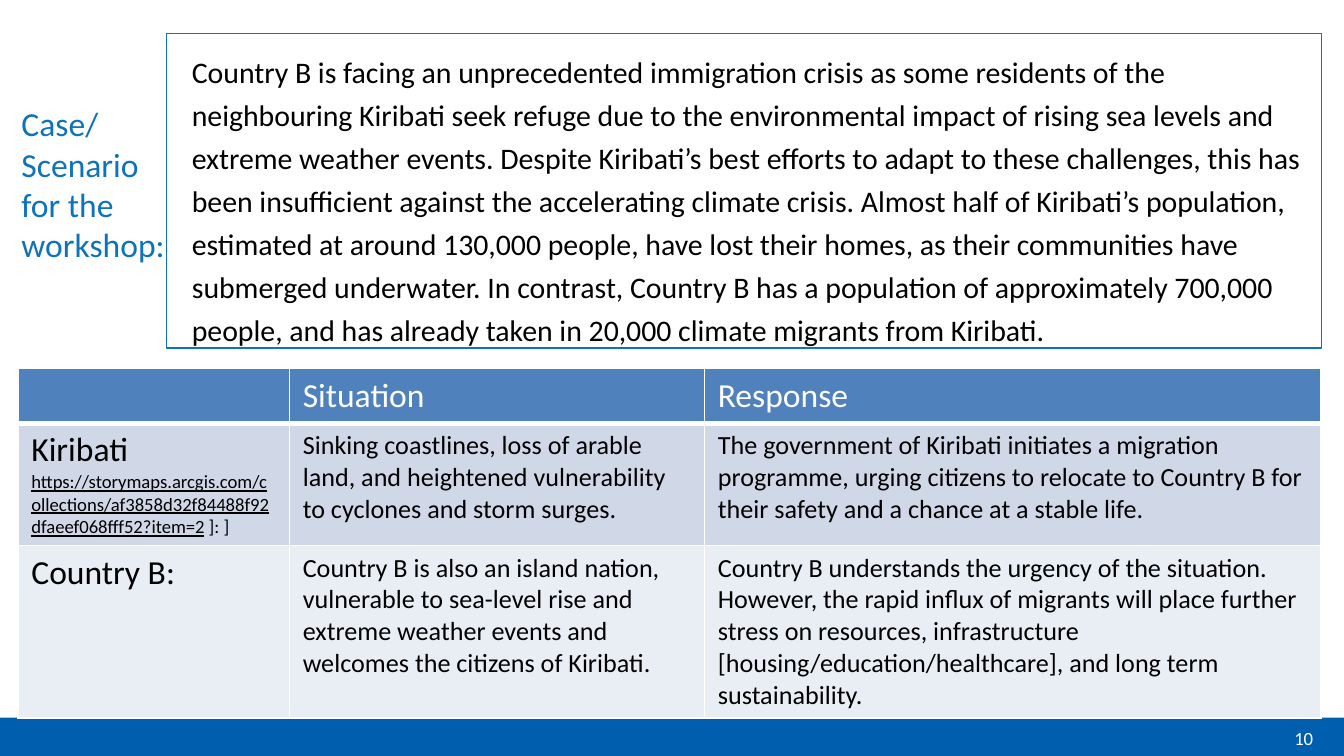
from dataclasses import dataclass

from lxml import etree
from pptx import Presentation
from pptx.dml.color import RGBColor
from pptx.enum import shapes, text
from pptx.oxml import ns
from pptx.util import Pt

FONT = "Calibri"
COLORS = {
    "band": "005EAE",
    "accent": "0E73B9",
    "header": "4F81BD",
    "row_dark": "D0D8E8",
    "row_light": "E9EDF4",
    "white": "FFFFFF",
    "black": "000000",
}


@dataclass
class Run:
    text: str
    size: float
    color: str = "black"
    underline: bool = False


@dataclass
class Row:
    height: float
    fill: str
    cells: list[list[Run]]


def rgb(name: str) -> RGBColor:
    return RGBColor.from_string(COLORS[name])


def add_runs(p, runs: list[Run]) -> None:
    for run in runs:
        r = p.add_run()
        r.text = run.text
        r.font.name = FONT
        r.font.size = Pt(run.size)
        r.font.bold = False
        r.font.underline = run.underline
        r.font.color.rgb = rgb(run.color)


def place(sp, left: float, top: float, width: float, height: float) -> None:
    sp.left, sp.top, sp.width, sp.height = map(Pt, (left, top, width, height))


def set_frame(tf, anchor, runs: list[Run], align=text.PP_ALIGN.LEFT):
    tf.word_wrap = True
    tf.auto_size = text.MSO_AUTO_SIZE.NONE
    tf.vertical_anchor = anchor
    tf.margin_left = tf.margin_right = tf.margin_top = tf.margin_bottom = Pt(7.2)
    p = tf.paragraphs[0]
    p.alignment = align
    add_runs(p, runs)
    return p


def add_rect(slide, left: float, top: float, width: float, height: float):
    sp = slide.shapes.add_shape(
        shapes.MSO_SHAPE.RECTANGLE, Pt(left), Pt(top), Pt(width), Pt(height))
    sp.shadow.inherit = False
    return sp


def set_borders(cell, bottom: float) -> None:
    """Draw white cell borders; they must precede the cell fill in the XML."""
    tc_pr = cell._tc.get_or_add_tcPr()
    for i, (side, width) in enumerate(
            [("lnL", 1), ("lnR", 1), ("lnT", 1), ("lnB", bottom)]):
        ln = etree.Element(ns.qn(f"a:{side}"), w=str(Pt(width)))
        fill = etree.SubElement(ln, ns.qn("a:solidFill"))
        etree.SubElement(fill, ns.qn("a:srgbClr"), val=COLORS["white"])
        tc_pr.insert(i, ln)


def add_grid(slide, left: float, top: float, widths: list[float], rows: list[Row]) -> None:
    table = slide.shapes.add_table(
        len(rows), len(widths), Pt(left), Pt(top),
        Pt(sum(widths)), Pt(sum(row.height for row in rows))).table
    for column, width in zip(table.columns, widths):
        column.width = Pt(width)
    for i, row in enumerate(rows):
        table.rows[i].height = Pt(row.height)
        for j, runs in enumerate(row.cells):
            cell = table.cell(i, j)
            cell.fill.solid()
            cell.fill.fore_color.rgb = rgb(row.fill)
            set_borders(cell, bottom=3 if i == 0 else 1)
            add_runs(cell.text_frame.paragraphs[0], runs)


SCENARIO = (
    "Country B is facing an unprecedented immigration crisis as some residents of the "
    "neighbouring Kiribati seek refuge due to the environmental impact of rising sea levels "
    "and extreme weather events. Despite Kiribati’s best efforts to adapt to these "
    "challenges, this has been insufficient against the accelerating climate crisis. Almost "
    "half of Kiribati’s population, estimated at around 130,000 people, have lost their "
    "homes, as their communities have submerged underwater. In contrast, Country B has a "
    "population of approximately 700,000 people, and has already taken in 20,000 climate "
    "migrants from Kiribati."
)

ROWS = [
    Row(29.2, "header", [
        [],
        [Run("Situation", 18, "white")],
        [Run("Response", 18, "white")],
    ]),
    Row(65.5, "row_dark", [
        [Run("Kiribati ", 18),
         Run("https://storymaps.arcgis.com/collections/"
             "af3858d32f84488f92dfaeef068fff52?item=2", 10, underline=True),
         Run(" ]: ]", 10)],
        [Run("Sinking coastlines, loss of arable land, and heightened vulnerability to "
             "cyclones and storm surges.", 14)],
        [Run("The government of Kiribati initiates a migration programme, urging citizens "
             "to relocate to Country B for their safety and a chance at a stable life.", 14)],
    ]),
    Row(92, "row_light", [
        [Run("Country B:", 18)],
        [Run("Country B is also an island nation, vulnerable to sea-level rise and extreme "
             "weather events and welcomes the citizens of Kiribati.", 14)],
        [Run("Country B understands the urgency of the situation. However, the rapid influx "
             "of migrants will place further stress on resources, infrastructure "
             "[housing/education/healthcare], and long term sustainability.", 14)],
    ]),
]


def main() -> None:
    prs = Presentation()
    prs.slide_width, prs.slide_height = Pt(720), Pt(405)
    slide = prs.slides.add_slide(prs.slide_layouts[5])

    # Footer band
    band = add_rect(slide, 0, 384.5, 720, 20.5)
    band.fill.solid()
    band.fill.fore_color.rgb = rgb("band")
    band.line.fill.background()

    # Title
    title = slide.shapes.title
    place(title, 4.3, 46, 93.6, 103)
    set_frame(title.text_frame, text.MSO_ANCHOR.BOTTOM,
              [Run("Case/ Scenario for the workshop:", 18, "accent")])

    # Scenario box
    box = add_rect(slide, 89.2, 18, 618.6, 168.5)
    box.fill.background()
    box.line.color.rgb = rgb("accent")
    box.line.width = Pt(0.75)
    p = set_frame(box.text_frame, text.MSO_ANCHOR.TOP, [Run(SCENARIO, 16)])
    p.line_spacing = 1.2
    p.space_after = Pt(6)
    p_pr = p._p.get_or_add_pPr()
    p_pr.set("marL", str(Pt(6.5)))
    p_pr.set("indent", "0")

    # Situation and response table
    add_grid(slide, 9.6, 197.5, [145.4, 222.4, 330.4], ROWS)

    # Slide number
    number = slide.shapes.add_textbox(Pt(667.4), Pt(387.4), Pt(43.2), Pt(15.8))
    set_frame(number.text_frame, text.MSO_ANCHOR.MIDDLE,
              [Run("10", 10, "white")], text.PP_ALIGN.RIGHT)

    prs.save("out.pptx")


if __name__ == "__main__":
    main()
